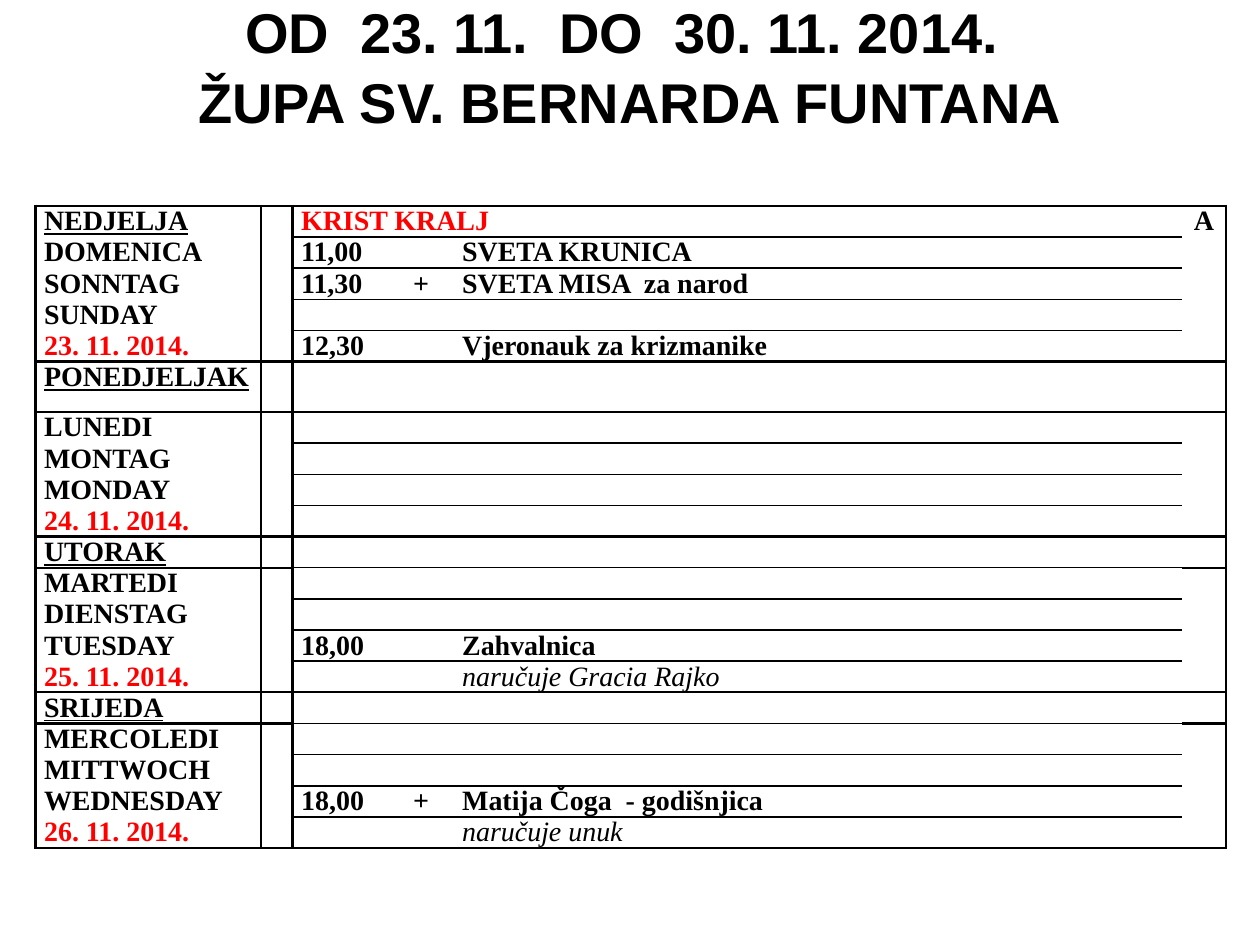
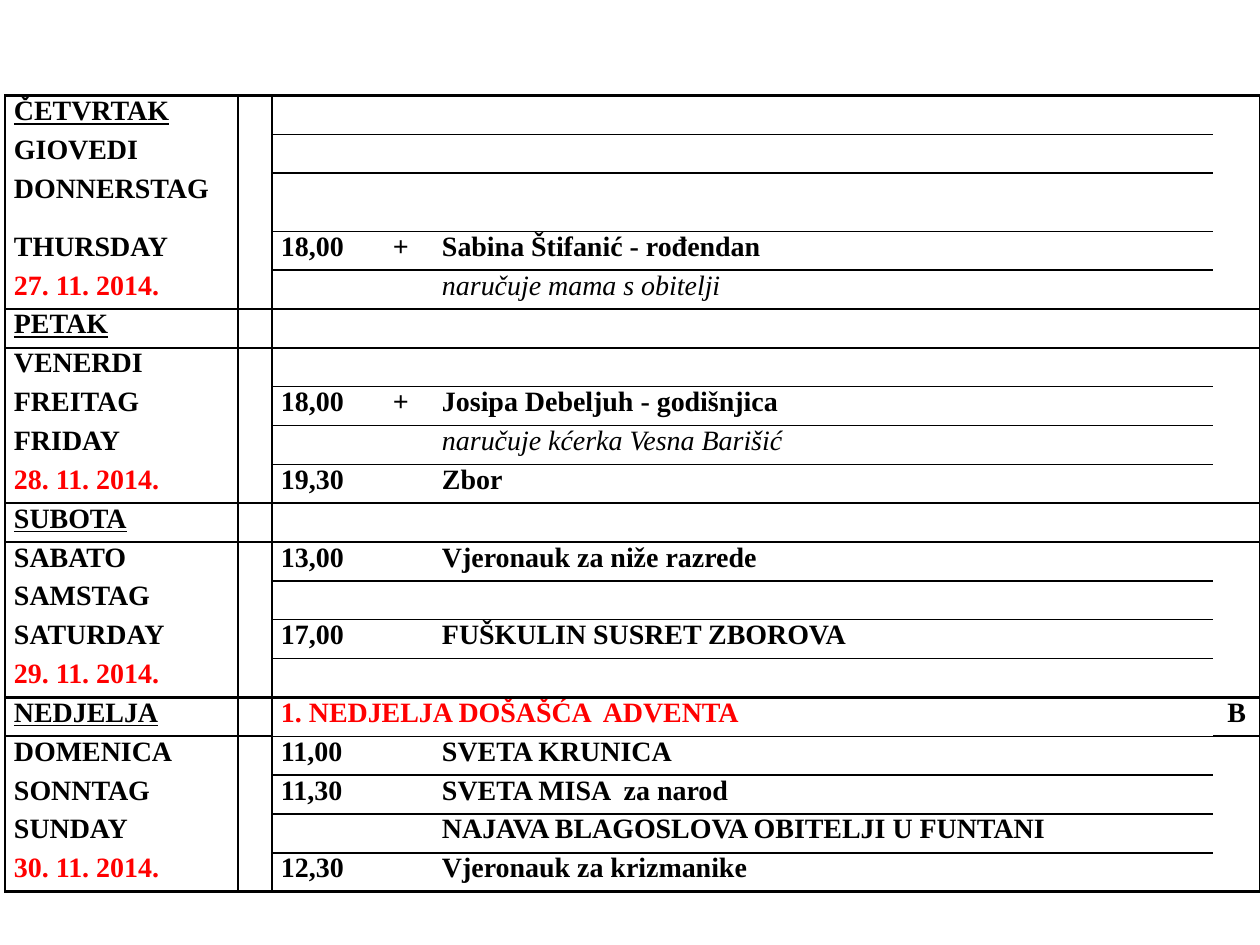
from dataclasses import dataclass

from lxml import etree
from pptx import Presentation
from pptx.dml.color import RGBColor
from pptx.enum import text
from pptx.oxml.ns import qn
from pptx.util import Pt

BLACK = RGBColor(0, 0, 0)
RED = RGBColor(255, 0, 0)
WHITE = RGBColor(255, 255, 255)
BODY_FONT = "Times New Roman"
BODY_SIZE = 16
FRAME_WIDTH = 1.5
RULE_WIDTH = 1
DAY_ROWS = 5
TAB_STOPS = (64, 92)
NO_STYLE = "{2D5ABB26-0587-4C30-8999-92F81FD0307C}"


@dataclass(frozen=True)
class Entry:
    text: str = ""
    color: RGBColor = BLACK
    italic: bool = False


@dataclass(frozen=True)
class Day:
    names: tuple[str, ...]
    date: str
    entries: dict[int, Entry]
    cycle: str = ""


@dataclass(frozen=True)
class Schedule:
    left: float
    top: float
    columns: tuple[float, ...]
    row_height: float
    tall_row: int
    tall_height: float
    days: tuple[Day, ...]


def event(time: str, what: str, mark: str = "") -> Entry:
    return Entry(f"{time}\t{mark}\t{what}")


def note(what: str) -> Entry:
    return Entry(f"\t\t{what}", italic=True)


SUNDAY = ("NEDJELJA", "DOMENICA", "SONNTAG", "SUNDAY")
ROSARY = event("11,00", "SVETA KRUNICA")
CONFIRMATION_CLASS = event("12,30", "Vjeronauk za krizmanike")

FIRST_HALF = Schedule(
    20.2, 117.6, (128.9, 18, 508.3, 25.2), 17.8, 5, 28.8,
    (
        Day(SUNDAY, "23. 11. 2014.", {
            0: Entry("KRIST KRALJ", RED),
            1: ROSARY,
            2: event("11,30", "SVETA MISA  za narod", "+"),
            4: CONFIRMATION_CLASS,
        }, "A"),
        Day(("PONEDJELJAK", "LUNEDI", "MONTAG", "MONDAY"), "24. 11. 2014.", {}),
        Day(("UTORAK", "MARTEDI", "DIENSTAG", "TUESDAY"), "25. 11. 2014.", {
            3: event("18,00", "Zahvalnica"),
            4: note("naručuje Gracia Rajko"),
        }),
        Day(("SRIJEDA", "MERCOLEDI", "MITTWOCH", "WEDNESDAY"), "26. 11. 2014.", {
            3: event("18,00", "Matija Čoga  - godišnjica", "+"),
            4: note("naručuje unuk"),
        }),
    ),
)

SECOND_HALF = Schedule(
    3, 54.6, (133.2, 19.4, 537.8, 26.6), 22.2, 2, 33.2,
    (
        Day(("ČETVRTAK", "GIOVEDI", "DONNERSTAG", "THURSDAY"), "27. 11. 2014.", {
            3: event("18,00", "Sabina Štifanić - rođendan", "+"),
            4: note("naručuje mama s obitelji"),
        }),
        Day(("PETAK", "VENERDI", "FREITAG", "FRIDAY"), "28. 11. 2014.", {
            2: event("18,00", "Josipa Debeljuh - godišnjica", "+"),
            3: note("naručuje kćerka Vesna Barišić"),
            4: event("19,30", "Zbor"),
        }),
        Day(("SUBOTA", "SABATO", "SAMSTAG", "SATURDAY"), "29. 11. 2014.", {
            1: event("13,00", "Vjeronauk za niže razrede"),
            3: event("17,00", "FUŠKULIN SUSRET ZBOROVA"),
        }),
        Day(SUNDAY, "30. 11. 2014.", {
            0: Entry("1. NEDJELJA DOŠAŠĆA  ADVENTA", RED),
            1: ROSARY,
            2: event("11,30", "SVETA MISA  za narod"),
            3: Entry("\t\tNAJAVA BLAGOSLOVA OBITELJI U FUNTANI"),
            4: CONFIRMATION_CLASS,
        }, "B"),
    ),
)


def set_borders(cell, widths: dict[str, float]) -> None:
    tc_pr = cell._tc.get_or_add_tcPr()
    for side in "LRTB":
        if side in widths:
            ln = etree.SubElement(tc_pr, qn(f"a:ln{side}"), w=str(Pt(widths[side])))
            fill = etree.SubElement(ln, qn("a:solidFill"))
            etree.SubElement(fill, qn("a:srgbClr"), val=str(BLACK))


def cell_borders(col: int, day_row: int) -> dict[str, float]:
    widths = {}
    if col in (0, 1):
        widths["L"] = FRAME_WIDTH
    if col in (0, 3):
        widths["R"] = FRAME_WIDTH
    if col == 2:
        widths.update(T=RULE_WIDTH, B=RULE_WIDTH)
    if day_row == 0:
        widths["T"] = FRAME_WIDTH
    if day_row == DAY_ROWS - 1:
        widths["B"] = FRAME_WIDTH
    return widths


def add_tab_stops(p) -> None:
    tabs = etree.Element(qn("a:tabLst"))
    for stop in TAB_STOPS:
        etree.SubElement(tabs, qn("a:tab"), pos=str(Pt(stop)), algn="l")
    p._p.get_or_add_pPr().insert(0, tabs)


def write_cell(cell, entry: Entry, underline: bool = False) -> None:
    cell.margin_left = cell.margin_right = Pt(5)
    cell.margin_top = cell.margin_bottom = 0
    cell.fill.background()
    p = cell.text_frame.paragraphs[0]
    if "\t" in entry.text:
        add_tab_stops(p)
    f = p.font
    f.name, f.size, f.color.rgb = BODY_FONT, Pt(BODY_SIZE), entry.color
    f.bold, f.italic, f.underline = not entry.italic, entry.italic, underline
    if entry.text:
        p.add_run().text = entry.text
    else:
        p._p.get_or_add_endParaRPr().set("sz", str(BODY_SIZE * 100))


def add_schedule(s, plan: Schedule) -> None:
    rows = len(plan.days) * DAY_ROWS
    heights = [plan.row_height] * rows
    heights[plan.tall_row] = plan.tall_height
    frame = s.shapes.add_table(
        rows, len(plan.columns), Pt(plan.left), Pt(plan.top),
        Pt(sum(plan.columns)), Pt(sum(heights)))
    table = frame.table
    table.first_row = table.horz_banding = False
    table._tbl.tblPr.find(qn("a:tableStyleId")).text = NO_STYLE
    for column, width in zip(table.columns, plan.columns):
        column.width = Pt(width)
    for row, height in zip(table.rows, heights):
        row.height = Pt(height)

    for i in range(rows):
        day, day_row = plan.days[i // DAY_ROWS], i % DAY_ROWS
        if day_row < len(day.names):
            label = Entry(day.names[day_row])
        else:
            label = Entry(day.date, RED)
        cycle = Entry(day.cycle if day_row == 0 else "")
        content = (label, Entry(), day.entries.get(day_row, Entry()), cycle)
        for col, entry in enumerate(content):
            cell = table.cell(i, col)
            set_borders(cell, cell_borders(col, day_row))
            write_cell(cell, entry, underline=col == 0 and day_row == 0)
        table.cell(i, 3).text_frame.paragraphs[0].alignment = text.PP_ALIGN.CENTER


def add_title(s, lines: tuple[str, ...]) -> None:
    sp = s.shapes.title
    sp.left, sp.top, sp.width, sp.height = 0, Pt(-9.4), Pt(720), Pt(106.6)
    sp.fill.solid()
    sp.fill.fore_color.rgb = WHITE
    tf = sp.text_frame
    tf.text = "\n".join(lines)
    tf.word_wrap = True
    tf.auto_size = text.MSO_AUTO_SIZE.NONE
    tf.vertical_anchor = text.MSO_ANCHOR.TOP
    tf.margin_top = Pt(7.8)
    for p in tf.paragraphs:
        p.alignment = text.PP_ALIGN.CENTER
        f = p.font
        f.name, f.size, f.bold, f.color.rgb = "Arial", Pt(32), True, BLACK
    tf.paragraphs[-1].space_before = Pt(1.5)


def main() -> None:
    prs = Presentation()
    prs.slide_width, prs.slide_height = Pt(720), Pt(540)
    s = prs.slides.add_slide(prs.slide_layouts[5])
    add_title(s, ("OD  23. 11.  DO  30. 11. 2014. ", "ŽUPA SV. BERNARDA FUNTANA"))
    add_schedule(s, FIRST_HALF)
    s = prs.slides.add_slide(prs.slide_layouts[6])
    add_schedule(s, SECOND_HALF)
    prs.save("out.pptx")


if __name__ == "__main__":
    main()
